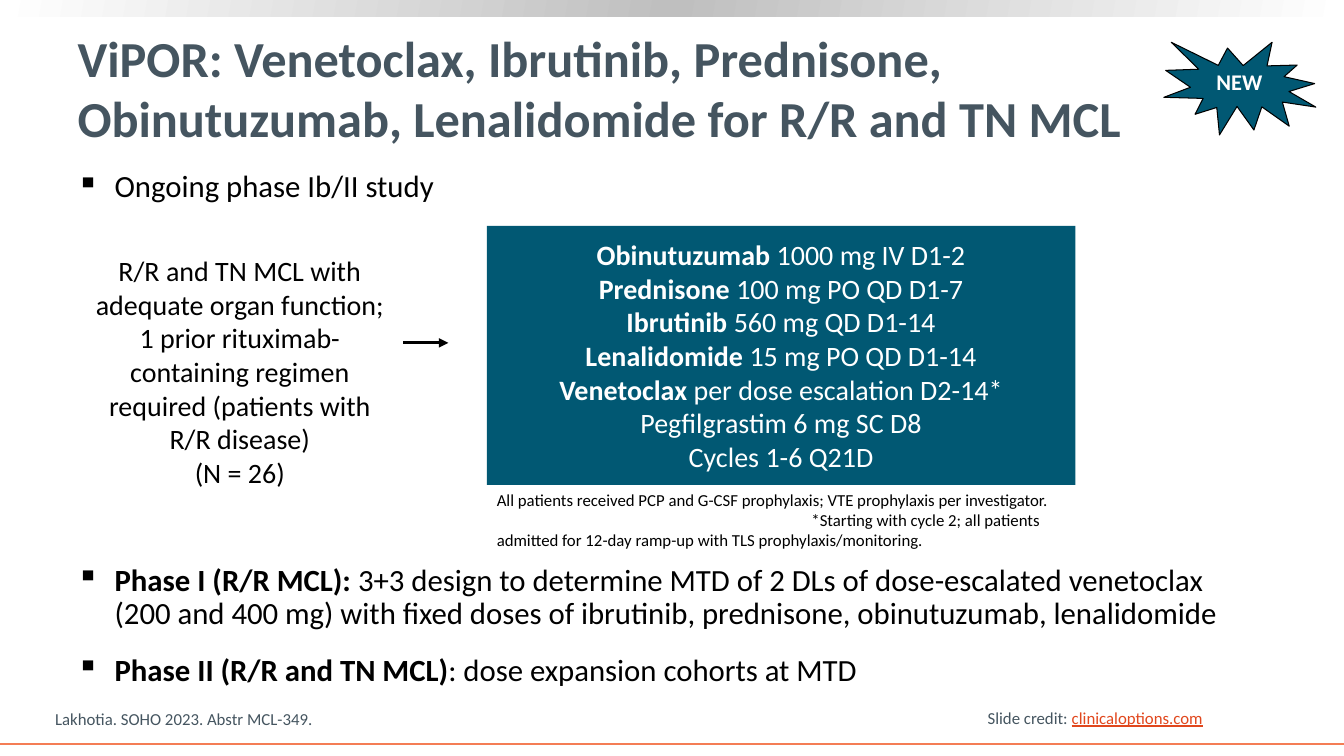
from copy import deepcopy

from lxml import etree
from pptx import Presentation
from pptx.dml.color import RGBColor
from pptx.enum import shapes, text
from pptx.oxml import ns
from pptx.util import Cm, Pt

TEAL = RGBColor(0x01, 0x58, 0x73)
SLATE = RGBColor(0x45, 0x55, 0x60)
ORANGE = RGBColor(0xF4, 0x7D, 0x55)
RED = RGBColor(0xE1, 0x47, 0x1D)
SILVER = RGBColor(0xBF, 0xBF, 0xBF)
BLACK = RGBColor(0, 0, 0)
WHITE = RGBColor(255, 255, 255)

TITLE = "ViPOR: Venetoclax, Ibrutinib, Prednisone, Obinutuzumab, Lenalidomide for R/R and TN MCL"
STUDY = [[("Ongoing phase Ib/II study", {})]]
PHASES = [
    [("Phase I (R/R MCL): ", {"bold": True}),
     ("3+3 design to determine MTD of 2 DLs of dose-escalated venetoclax (200 and 400 mg) "
      "with fixed doses of ibrutinib, prednisone, obinutuzumab, lenalidomide", {})],
    [("Phase II (R/R and TN MCL)", {"bold": True}), (": dose expansion cohorts at MTD", {})],
]
PATIENTS = [
    "R/R and TN MCL with adequate organ function; 1 prior rituximab-containing regimen "
    "required (patients with R/R disease)",
    "(N = 26)",
]
REGIMEN = [
    ("Obinutuzumab ", "1000 mg IV D1-2"),
    ("Prednisone ", "100 mg PO QD D1-7"),
    ("Ibrutinib ", "560 mg QD D1-14"),
    ("Lenalidomide ", "15 mg PO QD D1-14"),
    ("Venetoclax ", "per dose escalation D2-14*"),
    ("", "Pegfilgrastim 6 mg SC D8"),
    ("", "Cycles 1-6 Q21D"),
]
FOOTNOTES = [
    "All patients received PCP and G-CSF prophylaxis; VTE prophylaxis per investigator.",
    "*Starting with cycle 2; all patients admitted for 12-day ramp-up with TLS prophylaxis/monitoring.",
]
CITATION = ["Lakhotia. SOHO 2023. Abstr MCL-349."]
CREDIT = [[("Slide credit: ", {}), ("clinicaloptions.com", {"color": RED, "underline": True})]]

WIDTH, HEIGHT = Cm(33.87), Cm(19.05)
LEFT, CONTENT_WIDTH = Cm(1.68), Cm(30.23)
REGIMEN_LEFT, REGIMEN_TOP = Cm(12.27), Cm(5.69)
REGIMEN_WIDTH, REGIMEN_HEIGHT = Cm(14.83), Cm(6.53)
BULLET_INDENT = Cm(0.96)
ARROW_Y = Cm(8.64)


def write(shape, paragraphs, size, color=BLACK, bold=False, align=text.PP_ALIGN.LEFT,
          anchor=text.MSO_ANCHOR.TOP, wrap=True, bullet=None):
    frame = shape.text_frame
    frame.auto_size = text.MSO_AUTO_SIZE.NONE
    frame.word_wrap = wrap
    frame.vertical_anchor = anchor
    for index, content in enumerate(paragraphs):
        paragraph = frame.add_paragraph() if index else frame.paragraphs[0]
        paragraph.alignment = align
        if bullet:
            add_bullet(paragraph, bullet)
            paragraph.line_spacing = 0.9
            paragraph.space_before = Pt(10 if index else 0)
            paragraph.space_after = Pt(7)
        for words, style in [(content, {})] if isinstance(content, str) else content:
            run = paragraph.add_run()
            run.text = words
            run.font.name = "Calibri"
            run.font.size = Pt(size)
            run.font.bold = style.get("bold", bold)
            run.font.underline = style.get("underline")
            run.font.color.rgb = style.get("color", color)


def add_bullet(paragraph, character):
    properties = paragraph._p.get_or_add_pPr()
    properties.set("marL", str(BULLET_INDENT))
    properties.set("indent", str(-BULLET_INDENT))
    bullet_color = etree.SubElement(properties, ns.qn("a:buClr"))
    etree.SubElement(bullet_color, ns.qn("a:srgbClr")).set("val", str(BLACK))
    etree.SubElement(properties, ns.qn("a:buChar")).set("char", character)


def add_line(slide, start, end, color, width):
    line = slide.shapes.add_connector(shapes.MSO_CONNECTOR.STRAIGHT, *start, *end)
    line.line.color.rgb = color
    line.line.width = Pt(width)
    etree.SubElement(line._element.spPr, ns.qn("a:effectLst"))
    return line


def add_block(slide, kind, *bounds):
    shape = slide.shapes.add_shape(kind, *bounds)
    shape.shadow.inherit = False
    shape.fill.solid()
    shape.fill.fore_color.rgb = TEAL
    shape.line.fill.background()
    return shape


def add_top_band(slide):
    band = add_block(slide, shapes.MSO_SHAPE.RECTANGLE, 0, 0, WIDTH, Cm(0.41))
    band.fill.gradient()
    band.fill.gradient_angle = 170
    stops = band._element.spPr.find(".//" + ns.qn("a:gsLst"))
    stops.insert(1, deepcopy(stops[0]))
    for stop, position, color in zip(band.fill.gradient_stops, (0, 0.5, 1), (WHITE, SILVER, WHITE)):
        stop.position = position
        stop.color.rgb = color


def main():
    presentation = Presentation()
    presentation.slide_width, presentation.slide_height = WIDTH, HEIGHT
    slide = presentation.slides.add_slide(presentation.slide_layouts[5])
    center, middle = text.PP_ALIGN.CENTER, text.MSO_ANCHOR.MIDDLE

    add_top_band(slide)
    add_line(slide, (0, Cm(18.75)), (WIDTH, Cm(18.75)), ORANGE, 1.5)

    title = slide.shapes.title
    title.left, title.top, title.width, title.height = Cm(1.7), Cm(0.66), CONTENT_WIDTH, Cm(3.07)
    write(title, [TITLE], 36, color=SLATE, bold=True, anchor=middle)

    seal = add_block(slide, shapes.MSO_SHAPE.EXPLOSION1, Cm(29.34), Cm(0.99), Cm(3.86), Cm(2.46))
    seal.rotation = 5.9
    seal.line.color.rgb = BLACK
    seal.line.width = Pt(0)

    regimen = add_block(slide, shapes.MSO_SHAPE.RECTANGLE,
                        REGIMEN_LEFT, REGIMEN_TOP, REGIMEN_WIDTH, REGIMEN_HEIGHT)
    doses = [[(part, {"bold": part == drug}) for part in (drug, dose) if part]
             for drug, dose in REGIMEN]
    write(regimen, doses, 20, color=WHITE, align=center, anchor=middle, wrap=False)

    arrow = add_line(slide, (Cm(10.16), ARROW_Y), (Cm(11.3), ARROW_Y), BLACK, 2.25)
    etree.SubElement(arrow.line._get_or_add_ln(), ns.qn("a:tailEnd")).set("type", "triangle")

    def add_text(bounds, paragraphs, size, **style):
        box = slide.shapes.add_textbox(*bounds)
        write(box, paragraphs, size, **style)
        return box

    add_text((LEFT, Cm(4.19), CONTENT_WIDTH, Cm(1.4)), STUDY, 22, bullet="▪")
    add_text((LEFT, Cm(14.1), CONTENT_WIDTH, Cm(1.88)), PHASES, 22, bullet="▪")
    add_text((Cm(29.95), Cm(1.6), Cm(2.57), Cm(0.94)), ["NEW"], 16,
             color=WHITE, bold=True, align=center)
    add_text((Cm(1.93), Cm(6.27), Cm(8.23), Cm(6.25)), PATIENTS, 20, align=center)
    notes = add_text((REGIMEN_LEFT, REGIMEN_TOP + REGIMEN_HEIGHT, REGIMEN_WIDTH, Cm(1.8)),
                     FOOTNOTES, 12)
    notes.text_frame.paragraphs[1]._p.get_or_add_pPr().set("indent", str(Cm(7.93)))
    add_text((Cm(1.14), Cm(17.73), Cm(22.25), Cm(0.76)), CITATION, 12,
             color=SLATE, anchor=text.MSO_ANCHOR.BOTTOM)
    add_text((Cm(24.64), Cm(17.7), Cm(5.99), Cm(0.76)), CREDIT, 12, color=SLATE, wrap=False)

    presentation.save("out.pptx")


if __name__ == "__main__":
    main()
